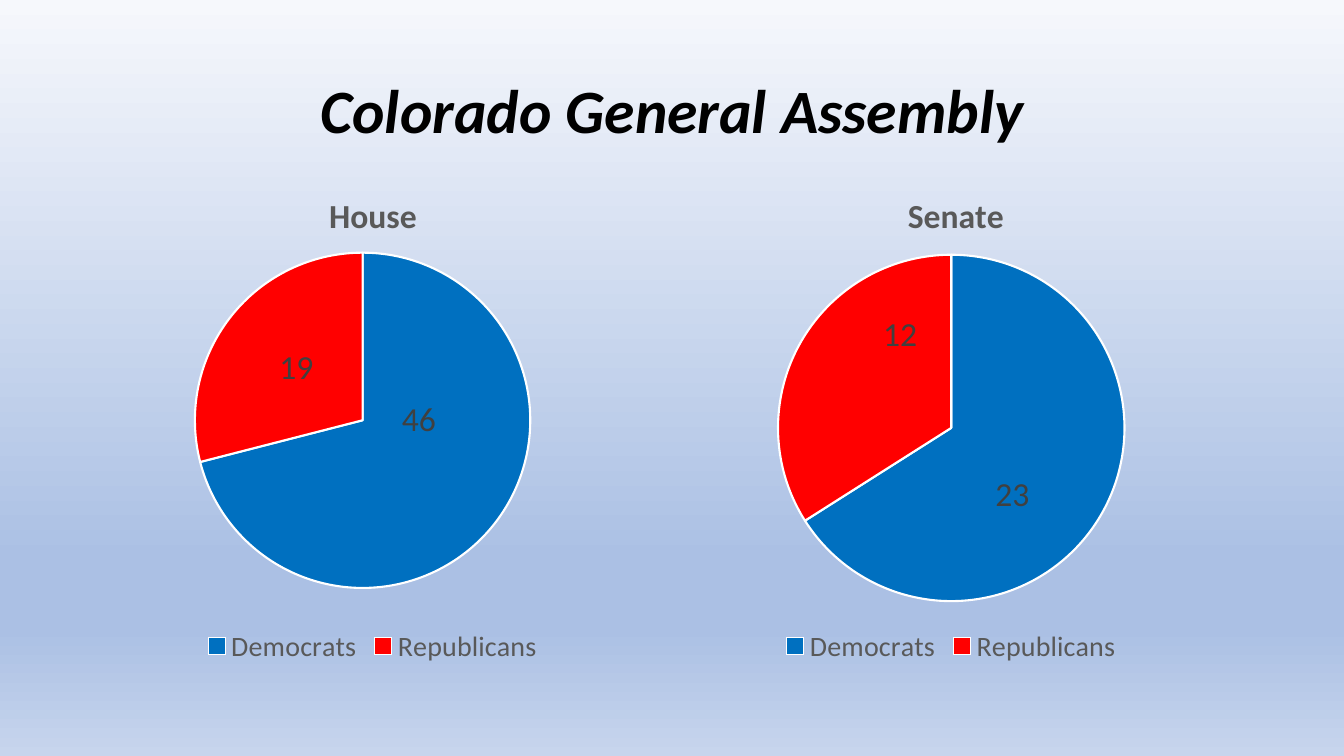
"""Build the Colorado General Assembly slide with a pie chart per chamber."""
from lxml import etree
from pptx import Presentation
from pptx.chart.data import CategoryChartData
from pptx.dml.color import RGBColor
from pptx.enum.chart import XL_CHART_TYPE, XL_LABEL_POSITION, XL_LEGEND_POSITION
from pptx.enum.text import MSO_ANCHOR, PP_ALIGN
from pptx.oxml import parse_xml
from pptx.oxml.ns import nsdecls, qn
from pptx.util import Inches, Pt

PIE = XL_CHART_TYPE.PIE
CENTER_LABEL = XL_LABEL_POSITION.CENTER
BOTTOM = XL_LEGEND_POSITION.BOTTOM
MIDDLE = MSO_ANCHOR.MIDDLE
CENTER = PP_ALIGN.CENTER

TITLE = "Colorado General Assembly"
FONT = "Calibri"
PARTIES = [("Democrats", "democrat"), ("Republicans", "republican")]
CHAMBERS = [
    {"name": "House", "shares": (71, 29), "seats": ("46", "19"),
     "title_at": (0.4, 0.05), "pie_at": (0.14, 0.18, 0.68, 0.66),
     "label_shifts": ((-0.02, -0.1), (0, 0))},
    {"name": "Senate", "shares": (66, 34), "seats": ("23", "12"),
     "title_at": (0.4, 0.05), "pie_at": (0.15, 0.18, 0.7, 0.69),
     "label_shifts": ((-0.03, 0.05), (0.05, -0.1))},
]
COLORS = {"title": "000000", "text": "595959", "label": "404040", "edge": "FFFFFF",
          "democrat": "0070C0", "republican": "FF0000"}
SKY = [(0, "F6F8FC"), (74, "ABC0E4"), (83, "ABC0E4"), (100, "C7D5ED")]
EDGES = [("xMode", "edge"), ("yMode", "edge")]
CHART_LEFT, CHART_TOP, CHART_STEP = 1.24, 1.6, 5.74
CHART_WIDTH, CHART_HEIGHT = 4.91, 5.04


def style(font, size, color, bold=False, italic=False):
    font.name, font.size, font.bold, font.italic = FONT, Pt(size), bold, italic
    font.color.rgb = RGBColor.from_string(COLORS[color])


def layout(values, modes=()):
    el = parse_xml(f"<c:layout {nsdecls('c')}><c:manualLayout/></c:layout>")
    for tag, value in [*modes, *zip("xywh", values)]:
        etree.SubElement(el[0], qn(f"c:{tag}")).set("val", str(value))
    return el


def paint_background(s):
    fill = s.background.fill
    fill.gradient()
    fill.gradient_angle = 270
    stops = s.element.find(".//" + qn("a:gsLst"))
    for stop in list(stops):
        stops.remove(stop)
    for pos, color in SKY:
        stop = etree.SubElement(stops, qn("a:gs"), pos=str(pos * 1000))
        etree.SubElement(stop, qn("a:srgbClr"), val=color)


def add_title(s):
    sp = s.shapes.add_textbox(Inches(0.92), Inches(0.4), Inches(11.5), Inches(1.45))
    tf = sp.text_frame
    tf.word_wrap, tf.vertical_anchor = True, MIDDLE
    p = tf.paragraphs[0]
    p.alignment, p.line_spacing = CENTER, 0.9
    r = p.add_run()
    r.text = TITLE
    style(r.font, 44, "title", bold=True, italic=True)


def place_chart_items(chart, chamber):
    root = chart.element
    for label, shift in zip(root.iter(qn("c:dLbl")), chamber["label_shifts"]):
        if any(shift):
            label.find(qn("c:idx")).addnext(layout(shift))
    title, area = (root.find(".//" + qn(tag)) for tag in ("c:title", "c:plotArea"))
    for parent in (title, area):
        for old in parent.findall(qn("c:layout")):
            parent.remove(old)
    title.find(qn("c:tx")).addnext(layout(chamber["title_at"], EDGES))
    area.insert(0, layout(chamber["pie_at"], [("layoutTarget", "inner"), *EDGES]))


def add_chamber(s, chamber, left):
    data = CategoryChartData()
    data.categories = [party for party, _ in PARTIES]
    data.add_series(chamber["name"], chamber["shares"])
    chart = s.shapes.add_chart(PIE, Inches(left), Inches(CHART_TOP), Inches(CHART_WIDTH),
                               Inches(CHART_HEIGHT), data).chart
    style(chart.font, 10, "title")

    chart.has_title = True
    r = chart.chart_title.text_frame.paragraphs[0].add_run()
    r.text = chamber["name"]
    style(r.font, 24, "text", bold=True)
    chart.has_legend = True
    chart.legend.position = BOTTOM
    chart.legend.include_in_layout = False
    style(chart.legend.font, 20, "text")

    plot = chart.plots[0]
    plot.vary_by_categories = True
    series = plot.series[0]
    for i, (_, color) in enumerate(PARTIES):
        point = series.points[i]
        point.format.fill.solid()
        point.format.fill.fore_color.rgb = RGBColor.from_string(COLORS[color])
        point.format.line.color.rgb = RGBColor.from_string(COLORS["edge"])
        point.format.line.width = Pt(1.5)
        label = point.data_label
        r = label.text_frame.paragraphs[0].add_run()
        r.text = chamber["seats"][i]
        style(r.font, 24, "label")
        label.position = CENTER_LABEL
    place_chart_items(chart, chamber)


def main():
    prs = Presentation()
    prs.slide_width, prs.slide_height = Inches(13.33), Inches(7.5)
    s = prs.slides.add_slide(prs.slide_layouts[6])
    paint_background(s)
    add_title(s)
    for i, chamber in enumerate(CHAMBERS):
        add_chamber(s, chamber, CHART_LEFT + i * CHART_STEP)
    prs.save("out.pptx")


if __name__ == "__main__":
    main()
